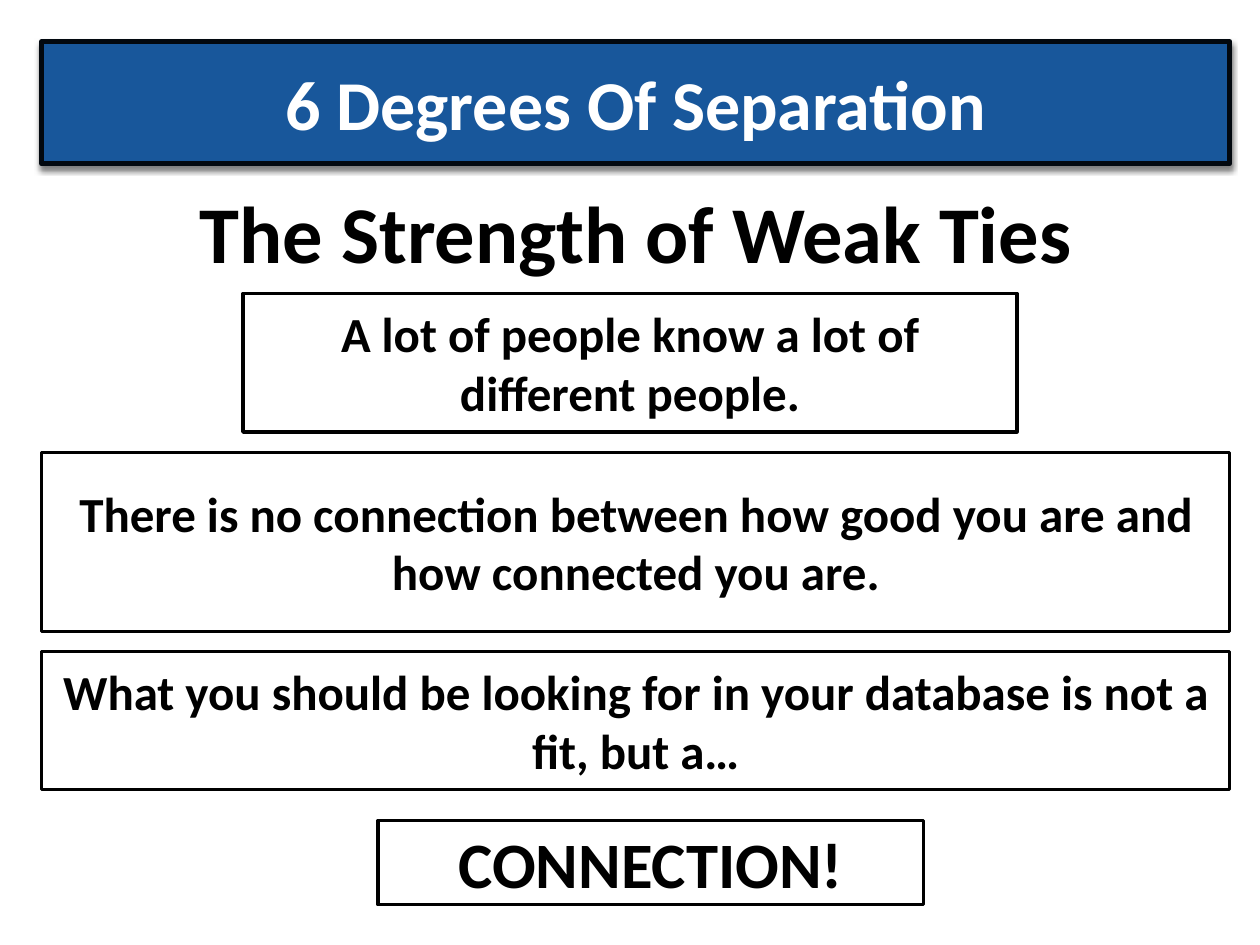
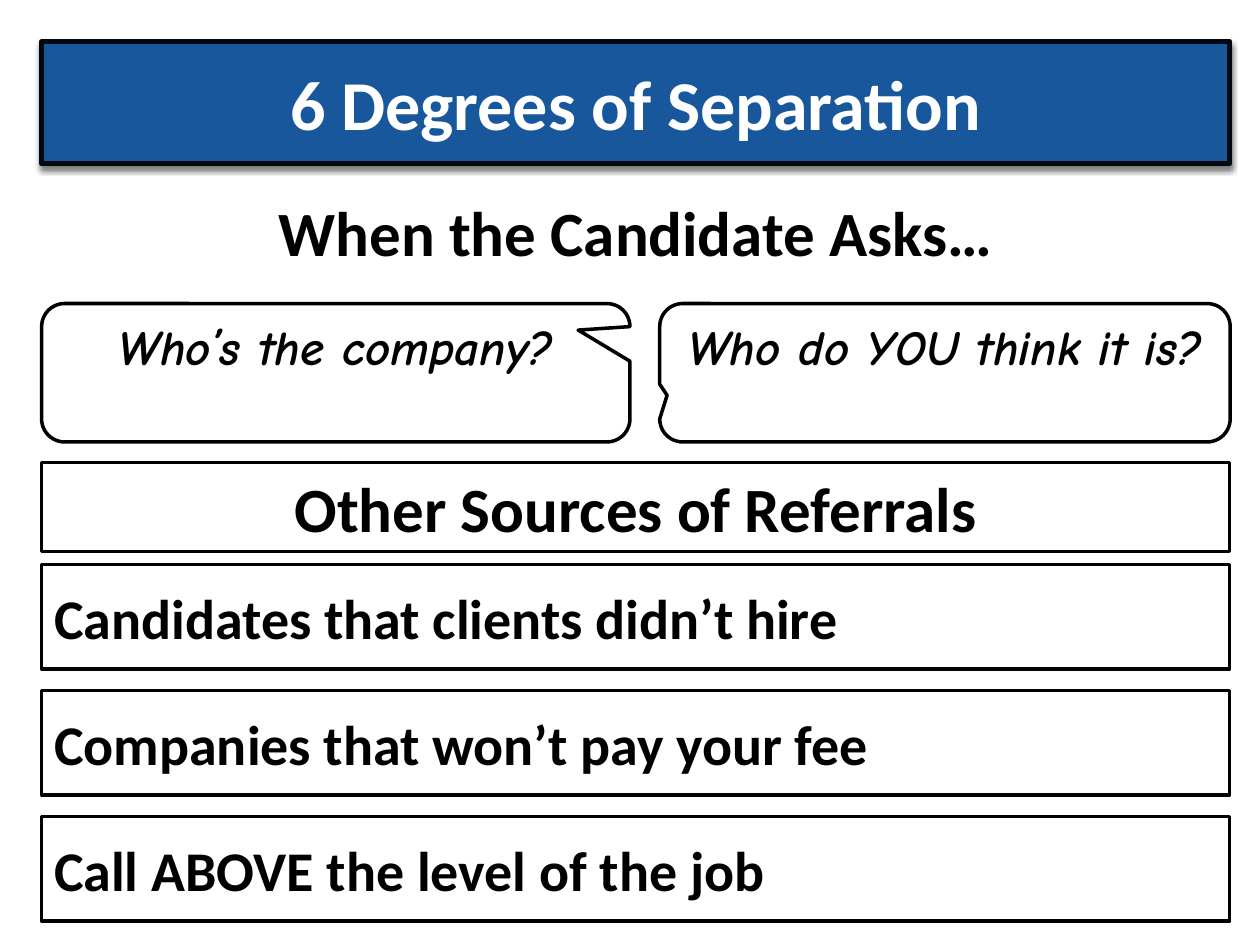
from lxml import etree
from pptx import Presentation
from pptx.dml.color import RGBColor
from pptx.enum.shapes import MSO_SHAPE
from pptx.enum.text import MSO_ANCHOR, PP_ALIGN
from pptx.oxml.ns import qn
from pptx.util import Cm, Pt

BLUE = RGBColor(0x18, 0x57, 0x9B)
INK = RGBColor(0x02, 0x08, 0x0F)
BLACK = RGBColor(0, 0, 0)
WHITE = RGBColor(255, 255, 255)
RECT = MSO_SHAPE.RECTANGLE
BUBBLE = MSO_SHAPE.ROUNDED_RECTANGULAR_CALLOUT
MID, TOP = MSO_ANCHOR.MIDDLE, MSO_ANCHOR.TOP
CENTER, LEFT = PP_ALIGN.CENTER, PP_ALIGN.LEFT

EDGE, WIDE = 0.84, 23.95

TIES = {
    "title": "6 Degrees Of Separation",
    "head": ("The Strength of Weak Ties", 46),
    "boxes": [
        ("A lot of people know a lot of different people.", 28, 4.9, 5.92, 15.6, 2.79),
        ("There is no connection between how good you are and how connected you are.",
         28, EDGE, 9.12, WIDE, 3.61),
        ("What you should be looking for in your database is not a fit, but a…",
         28, EDGE, 13.13, WIDE, 2.79),
        ("CONNECTION!", 37, 7.62, 16.54, 11, 1.7),
    ],
}
ASKS = {
    "title": "6 Degrees of Separation",
    "head": ("When the Candidate Asks…", 36),
    "boxes": [("Other Sources of Referrals", 36, EDGE, 9.32, WIDE, 1.8)],
    "bubbles": [
        ("Who’s the company?", EDGE, 11.86, (0.412, -0.308, 0.167)),
        ("Who do YOU think it is?", 13.3, 11.5, (-0.487, 0.163, 0.167)),
    ],
    "rows": [
        "Candidates that clients didn’t hire",
        "Companies that won’t pay your fee",
        "Call ABOVE the level of the job",
    ],
}


def style(shape, text, size, fill=WHITE, line=BLACK, width=2, ink=BLACK,
          font="Calibri", slant=False, align=CENTER, anchor=MID):
    shape.fill.solid()
    shape.fill.fore_color.rgb = fill
    shape.line.color.rgb = line
    shape.line.width = Pt(width)
    shape.shadow.inherit = False
    frame = shape.text_frame
    frame.text = text
    frame.word_wrap = True
    frame.vertical_anchor = anchor
    para = frame.paragraphs[0]
    para.alignment = align
    face = para.runs[0].font
    face.name, face.size = font, Pt(size)
    face.bold, face.italic = True, slant
    face.color.rgb = ink


def add_box(slide, text, size, left, top, width, height, kind=RECT, **look):
    shape = slide.shapes.add_shape(kind, Cm(left), Cm(top), Cm(width), Cm(height))
    style(shape, text, size, **look)
    return shape


def add_shade(shape):
    effects = shape._element.spPr.find(qn("a:effectLst"))
    shade = etree.SubElement(effects, qn("a:outerShdw"), blurRad=str(Pt(3)),
                             dist=str(Pt(2)), dir="5400000", rotWithShape="0")
    tint = etree.SubElement(shade, qn("a:srgbClr"), val="000000")
    etree.SubElement(tint, qn("a:alpha"), val="50000")


def add_page(deck, page):
    slide = deck.slides.add_slide(deck.slide_layouts[5])
    title = slide.shapes.title
    title.left, title.top = Cm(EDGE), Cm(EDGE)
    title.width, title.height = Cm(WIDE), Cm(2.46)
    style(title, page["title"], 40, fill=BLUE, line=INK, width=3, ink=WHITE)
    add_shade(title)
    add_box(slide, *page["head"], EDGE, 3.81, WIDE, 1.7, line=WHITE)
    for text, left, width, tail in page.get("bubbles", []):
        shape = add_box(slide, text, 28, left, 6.12, width, 2.79, kind=BUBBLE,
                        font="Comic Neue", slant=True, anchor=TOP)
        for spot, value in enumerate(tail):
            shape.adjustments[spot] = value
    for box in page["boxes"]:
        add_box(slide, *box)
    for step, text in enumerate(page.get("rows", [])):
        add_box(slide, text, 32, EDGE, 11.38 + 2.54 * step, WIDE, 2.11, align=LEFT)


def main():
    deck = Presentation()
    deck.slide_width, deck.slide_height = Cm(25.4), Cm(19.05)
    for page in (TIES, ASKS):
        add_page(deck, page)
    deck.save("out.pptx")


if __name__ == "__main__":
    main()
